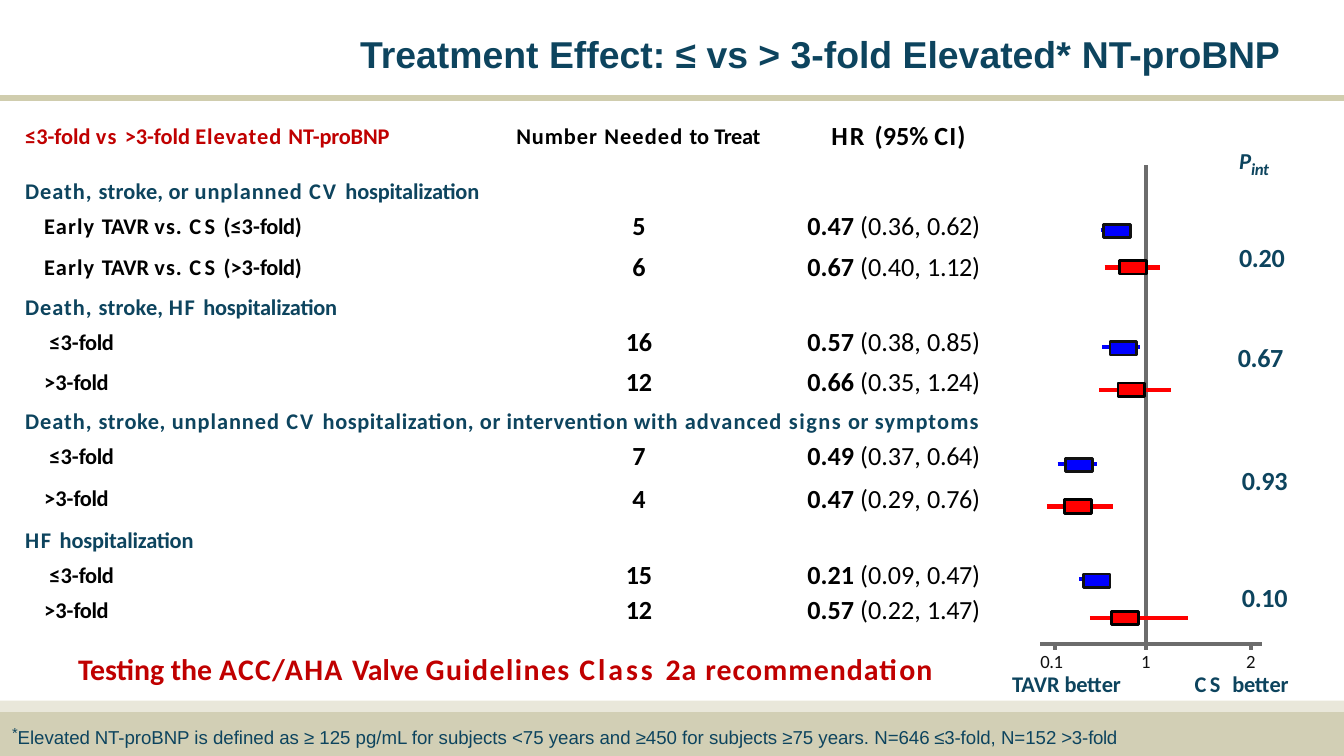
from lxml import etree
from pptx import Presentation
from pptx import util as u
from pptx.dml.color import RGBColor
from pptx.enum import shapes, text
from pptx.oxml import ns

COLORS = {"navy": "0D445E", "crimson": "C00000", "black": "000000", "tick": "111111",
          "axis": "6C6C6C", "blue": "0000FF", "red": "FF0000", "rule": "D0CDAE",
          "band": "D2CFB5", "strip": "E9E7DA"}
LEFT, CENTER = text.PP_ALIGN.LEFT, text.PP_ALIGN.CENTER

EARLY = [("Early ", 0.6), ("TAVR ", 0), ("vs. ", 0.6), ("CS", 1.8)]
FOLD = ("fold", -0.2)
LOW, HIGH = [("≤3-", 0), FOLD], [(">3-", 0), FOLD]

HEADER = [
    ([("≤3-fold ", 0), ("vs ", 0.8), (">3-fold ", 0), ("Elevated ", 0.5), ("NT-", 0),
      ("proBNP", -0.1)], 2, 0.5, dict(color="crimson", size=12)),
    ([("Number ", 0.5), ("Needed ", 0.6), ("to ", 0), ("Treat", -0.2)], 15.8, 0.5,
     dict(size=12, align=CENTER)),
    ([("HR ", 1.1), ("(95% ", 0), ("CI)", 0.6)], 9.4, 0,
     dict(size=14, align=CENTER, leading=16)),
]
OUTCOMES = [
    (23, 6, [("Death, ", 0.5), ("stroke, or ", 0.1), ("unplanned ", 0.5), ("CV ", 1.1),
             ("hospitalization", -0.1)], True,
     [(20.9, 12.2, 2, EARLY + [(" (≤3-", 0), ("fold)", -0.2)], "5", "0.47", "0.36", "0.62"),
      (22.3, 12.2, 3, EARLY + [(" (>3-", 0), ("fold)", -0.2)], "6", "0.67", "0.40", "1.12")]),
    (18.7, 2.1, [("Death, ", 0.5), ("stroke, ", 0.1), ("HF ", 0.9),
                 ("hospitalization", -0.1)], False,
     [(20.9, 15, 2, LOW, "16", "0.57", "0.38", "0.85"),
      (21.6, 12.2, 2.7, HIGH, "12", "0.66", "0.35", "1.24")]),
    (18.7, 1.9, [("Death, ", 0.5), ("stroke, ", 0.3), ("unplanned ", 0.5), ("CV ", 1.1),
                 ("hospitalization, or intervention with ", 0.3), ("advanced ", 0.6),
                 ("signs", 0.8), (" or ", 0.3), ("symptoms", 0.6)], True,
     [(21.6, 15, 2, LOW, "7", "0.49", "0.37", "0.64"),
      (23, 12.2, 3.3, HIGH, "4", "0.47", "0.29", "0.76")]),
    (19.4, 2.4, [("HF ", 0.9), ("hospitalization", -0.1)], False,
     [(19.4, 15, 2, LOW, "15", "0.21", "0.09", "0.47"),
      (18, 12.2, 1.4, HIGH, "12", "0.57", "0.22", "1.47")]),
]
ESTIMATES = [
    ("blue", 123.1, 589.7, 600.5, 591.1), ("red", 143.3, 591.8, 621.4, 599.8),
    ("blue", 185.8, 590.4, 610.6, 594.7), ("red", 208.8, 589, 627.1, 599),
    ("blue", 248.4, 566.6, 587.5, 571), ("red", 271.4, 560.9, 596.2, 570.2),
    ("blue", 310.3, 578.2, 594, 580.3), ("red", 331.2, 583.9, 636.5, 595.4),
]
P_VALUES = [("0.20", 663.8, 128.6), ("0.67", 663.1, 182.2),
            ("0.93", 665.3, 247.7), ("0.10", 665.3, 310.3)]
TICKS = [("0.1", -0.2, 557.3, 565.2), ("1", -0.5, 611.3, 613.8), ("2", -0.5, 667.6, 670.3)]


def rgb(name):
    return RGBColor.from_string(COLORS[name])


class Board:
    """Holds the shared style and the current slide, and draws each kind of element."""

    def __init__(self, slide):
        self.slide = slide
        self.base = dict(name="Calibri", size=12, bold=True, italic=False)

    def add_runs(self, frame, runs, color="black", align=LEFT, leading=None, **style):
        paragraph = frame.paragraphs[0]
        paragraph.alignment = align
        if leading:
            paragraph.line_spacing = u.Pt(leading)
        for content, spacing, *extra in runs:
            look = {**self.base, **style, **(extra[0] if extra else {})}
            run = paragraph.add_run()
            run.text = content
            properties = run._r.get_or_add_rPr()
            properties.set("spc", str(round(spacing * 100)))
            if "baseline" in look:
                properties.set("baseline", str(look.pop("baseline") * 1000))
            look["size"] = u.Pt(look["size"])
            for key, value in look.items():
                setattr(run.font, key, value)
            run.font.color.rgb = rgb(color)

    def inset(self, holder, left=0, top=0):
        margins = dict(margin_left=left, margin_top=top, margin_right=0, margin_bottom=0)
        for key, value in margins.items():
            setattr(holder, key, u.Pt(value))

    def title(self, runs, left, top, width, height, **style):
        title = self.slide.shapes.title
        place = dict(left=left, top=top, width=width, height=height)
        for key, value in place.items():
            setattr(title, key, u.Pt(value))
        frame = title.text_frame
        self.inset(frame, 15.8, 10)
        frame.vertical_anchor = text.MSO_ANCHOR.TOP
        frame.auto_size = text.MSO_AUTO_SIZE.NONE
        self.add_runs(frame, runs, **style)

    def label(self, runs, left, top, width, height, **style):
        box = self.slide.shapes.add_textbox(*map(u.Pt, (left, top, width, height)))
        box.text_frame.word_wrap = True
        self.inset(box.text_frame, top=0.9)
        self.add_runs(box.text_frame, runs, **style)

    def rect(self, left, top, width, height, fill, outline=None):
        rect = self.slide.shapes.add_shape(shapes.MSO_SHAPE.RECTANGLE,
                                           *map(u.Pt, (left, top, width, height)))
        rect.shadow.inherit = False
        rect.fill.solid()
        rect.fill.fore_color.rgb = rgb(fill)
        if outline:
            rect.line.color.rgb = rgb(outline)
            rect.line.width = u.Pt(1.5)
        else:
            rect.line.fill.background()

    def line(self, x1, y1, x2, y2, color="axis", weight=2.25):
        line = self.slide.shapes.add_connector(shapes.MSO_CONNECTOR.STRAIGHT,
                                               *map(u.Pt, (x1, y1, x2, y2)))
        line.line.color.rgb = rgb(color)
        line.line.width = u.Pt(weight)
        etree.SubElement(line._element.spPr, ns.qn("a:effectLst"))

    def estimate(self, color, y, low, high, marker):
        self.line(low, y, high, y, color)
        rise, outline = (2.8, "tick") if color == "blue" else (3.6, "black")
        self.rect(marker, y - rise, 14.4, 7.2, color, outline)

    def table(self, heights, widths, left, top):
        frame = self.slide.shapes.add_table(len(heights), len(widths), *map(
            u.Pt, (left, top, sum(widths), sum(heights))))
        table = frame.table
        table.first_row = table.horz_banding = False
        for column, width in zip(table.columns, widths):
            column.width = u.Pt(width)
        for row, height in zip(table.rows, heights):
            row.height = u.Pt(height)
        for cell in table.iter_cells():
            cell.fill.background()
            self.inset(cell)
        return table

    def cell(self, cell, runs, left=0, top=0, **style):
        self.inset(cell, left, top)
        self.add_runs(cell.text_frame, runs, **style)

    def blank(self, cell):
        paragraph = cell.text_frame.paragraphs[0]._p
        etree.SubElement(paragraph, ns.qn("a:endParaRPr")).set("sz", "1200")


def outcome_table(board):
    heights = [23.8]
    for height, _, _, _, arms in OUTCOMES:
        heights += [height] + [arm[0] for arm in arms]
    table = board.table(heights, [236.2, 172.8, 112.3], 11.5, 65.5)
    for column, (runs, left, top, style) in enumerate(HEADER):
        board.cell(table.cell(0, column), runs, left, top, **style)
    row = 1
    for _, top, heading, spans, arms in OUTCOMES:
        board.cell(table.cell(row, 0), heading, 2, top, color="navy")
        for column in (1, 2):
            board.blank(table.cell(row, column))
        if spans:
            table.cell(row, 0).merge(table.cell(row, 2))
        for row, (_, left, top, name, nnt, ratio, low, high) in enumerate(arms, row + 1):
            plain = dict(bold=False)
            interval = [(f"{ratio} ", 0), (f"({low}, ", 0, plain), (f"{high})", -0.2, plain)]
            board.cell(table.cell(row, 0), name, left, top)
            board.cell(table.cell(row, 1), [(nnt, -0.5 if len(nnt) == 1 else -0.2)],
                       16.4, top - 1.3, size=14, align=CENTER)
            board.cell(table.cell(row, 2), interval, 12.1, top - 1.3, size=14)
        row += 1


def main():
    deck = Presentation()
    deck.slide_width, deck.slide_height = u.Pt(720), u.Pt(405)
    board = Board(deck.slides.add_slide(deck.slide_layouts[5]))
    board.rect(0, 381.4, 720, 23.6, "band")
    board.rect(0, 375.4, 720, 6, "strip")
    board.line(0, 52.6, 720, 52.6, "rule", 3)
    board.title([("Treatment Effect: ≤ vs > 3-fold Elevated*", 0), (" NT-proBNP", -0.1)],
                177.1, 6.5, 527, 38.9, name="Arial", size=20, color="navy")
    outcome_table(board)

    board.label([("P", -0.3, dict(size=21, baseline=14)), ("int", -0.2, dict(size=9))],
                663.8, 72, 32, 27, italic=True, color="navy")
    for value, left, top in P_VALUES:
        board.label([(value, -0.2)], left, top, 29, 18.7, size=14, color="navy")

    board.line(613.8, 344.2, 613.8, 88.6)
    board.line(557.3, 344.9, 676.1, 344.9)
    for mark, spacing, left, x in TICKS:
        board.line(x, 345.6, x, 348.5)
        board.label([(mark, spacing)], left, 347.4, 18, 13.7,
                    size=10, bold=False, color="tick")
    board.label([("TAVR", 0), (" better", -0.1)], 542.2, 358, 66, 16, color="navy")
    board.label([("CS ", 1.8), ("better", -0.1)], 640, 358, 56, 16, color="navy")
    for estimate in ESTIMATES:
        board.estimate(*estimate)

    board.label([("*", 0, dict(size=13.5, baseline=25)), ("Elevated", 0), (" NT-", -0.1),
                 ("proBNP is defined as ≥ 125 pg/mL for subjects <75 years and "
                  "≥450 for subjects ≥75 years. N=646 ", 0),
                 ("≤3-", -0.1), ("fold, N=152", 0), (" >3-", -0.1), FOLD],
                6.5, 384.5, 604, 14, name="Arial", size=10, bold=False, color="navy")
    board.label([("Testing the ", 0), ("ACC/AHA ", 0.7), ("Valve ", 0), ("Guidelines ", 0.8),
                 ("Class ", 1.6), ("2a recommendation", 0.6)],
                41.8, 347.8, 470, 20.9, size=16, color="crimson")
    deck.save("out.pptx")


if __name__ == "__main__":
    main()
